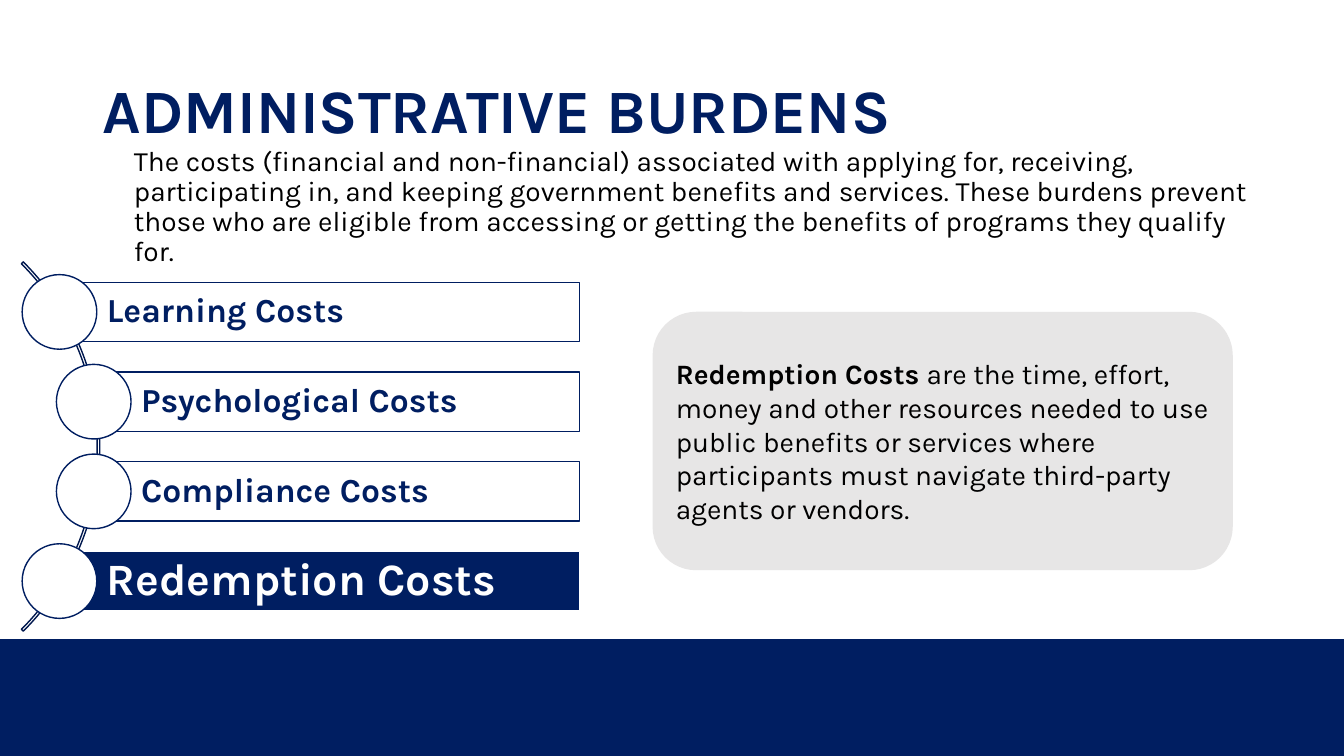
from pptx import Presentation
from pptx.dml.color import RGBColor
from pptx.enum.shapes import MSO_SHAPE
from pptx.enum.text import MSO_ANCHOR, PP_ALIGN
from pptx.util import Inches, Pt

HEADING = "ADMINISTRATIVE BURDENS"
DEFINITION = (
    "The costs (financial and non-financial) associated with applying for, receiving, "
    "participating in, and keeping government benefits and services. These burdens prevent "
    "those who are eligible from accessing or getting the benefits of programs they qualify for."
)
COSTS = [
    ("Learning Costs", 0),
    ("Psychological Costs", 1),
    ("Compliance Costs", 1),
    ("Redemption Costs", 0),
]
CURRENT_COST = "Redemption Costs"
EXPLANATION = [
    ("Redemption Costs ", True),
    ("are the time, effort, money and other resources needed to use public benefits "
     "or services where participants must navigate third-party agents or vendors.", False),
]

NAVY = RGBColor(0x00, 0x1E, 0x61)
ARC_NAVY = RGBColor(0x00, 0x18, 0x4E)
WHITE = RGBColor(0xFF, 0xFF, 0xFF)
BLACK = RGBColor(0x00, 0x00, 0x00)
GREY = RGBColor(0xE7, 0xE6, 0xE6)

SLIDE_W, SLIDE_H = 13.33, 7.5
FOOTER_H = 1.16
BAR_LEFT, BAR_RIGHT, BAR_H = 0.59, 5.75, 0.59
FIRST_BAR_TOP, BAR_PITCH, BAR_INDENT = 2.8, 0.89, 0.34
CIRCLE = 0.74
ARC_LEFT, ARC_TOP, ARC_SIZE = -4.19, 1.84, 5.18

deck = Presentation()
deck.slide_width, deck.slide_height = Inches(SLIDE_W), Inches(SLIDE_H)
slide = deck.slides.add_slide(deck.slide_layouts[6])


def draw(kind, left, top, width, height, fill=None, line=None):
    shape = slide.shapes.add_shape(kind, *map(Inches, (left, top, width, height)))
    shape.shadow.inherit = False
    if fill is None:
        shape.fill.background()
    else:
        shape.fill.solid()
        shape.fill.fore_color.rgb = fill
    if line is None:
        shape.line.fill.background()
    else:
        shape.line.color.rgb = line
        shape.line.width = Pt(1)
    return shape


def write(shape, runs, size, color, anchor=MSO_ANCHOR.MIDDLE, spacing=0.9):
    frame = shape.text_frame
    frame.word_wrap = True
    frame.vertical_anchor = anchor
    paragraph = frame.paragraphs[0]
    paragraph.alignment = PP_ALIGN.LEFT
    paragraph.line_spacing = spacing
    for words, bold in runs:
        run = paragraph.add_run()
        run.text = words
        run.font.name, run.font.size, run.font.bold = "Karla", Pt(size), bold
        run.font.color.rgb = color


def text_area(left, top, width, height):
    return slide.shapes.add_textbox(*map(Inches, (left, top, width, height)))


draw(MSO_SHAPE.RECTANGLE, 0, SLIDE_H - FOOTER_H, SLIDE_W, FOOTER_H, NAVY)
write(text_area(0.92, 0.4, 11.5, 1.45), [(HEADING, True)], 44, NAVY)
write(text_area(1.23, 1.41, 11.5, 4.2), [(DEFINITION, False)], 20, BLACK, MSO_ANCHOR.TOP)

arc = draw(MSO_SHAPE.BLOCK_ARC, ARC_LEFT, ARC_TOP, ARC_SIZE, ARC_SIZE, line=ARC_NAVY)
for position, adjustment in enumerate((189, 27, 0.005)):
    arc.adjustments[position] = adjustment

for row, (cost, indent) in enumerate(COSTS):
    left = BAR_LEFT + indent * BAR_INDENT
    top = FIRST_BAR_TOP + row * BAR_PITCH
    if cost == CURRENT_COST:
        fill, ink, size = NAVY, WHITE, 32
    else:
        fill, ink, size = WHITE, NAVY, 24
    bar = draw(MSO_SHAPE.RECTANGLE, left, top, BAR_RIGHT - left, BAR_H, fill, ink)
    bar.text_frame.margin_left = Inches(0.47)
    write(bar, [(cost, True)], size, ink)
    draw(MSO_SHAPE.OVAL, left - CIRCLE / 2, top + (BAR_H - CIRCLE) / 2,
         CIRCLE, CIRCLE, WHITE, NAVY)

panel = draw(MSO_SHAPE.ROUNDED_RECTANGLE, 6.48, 3.1, 5.74, 2.55, GREY, GREY)
write(panel, EXPLANATION, 20, BLACK, spacing=1.0)

deck.save("out.pptx")
